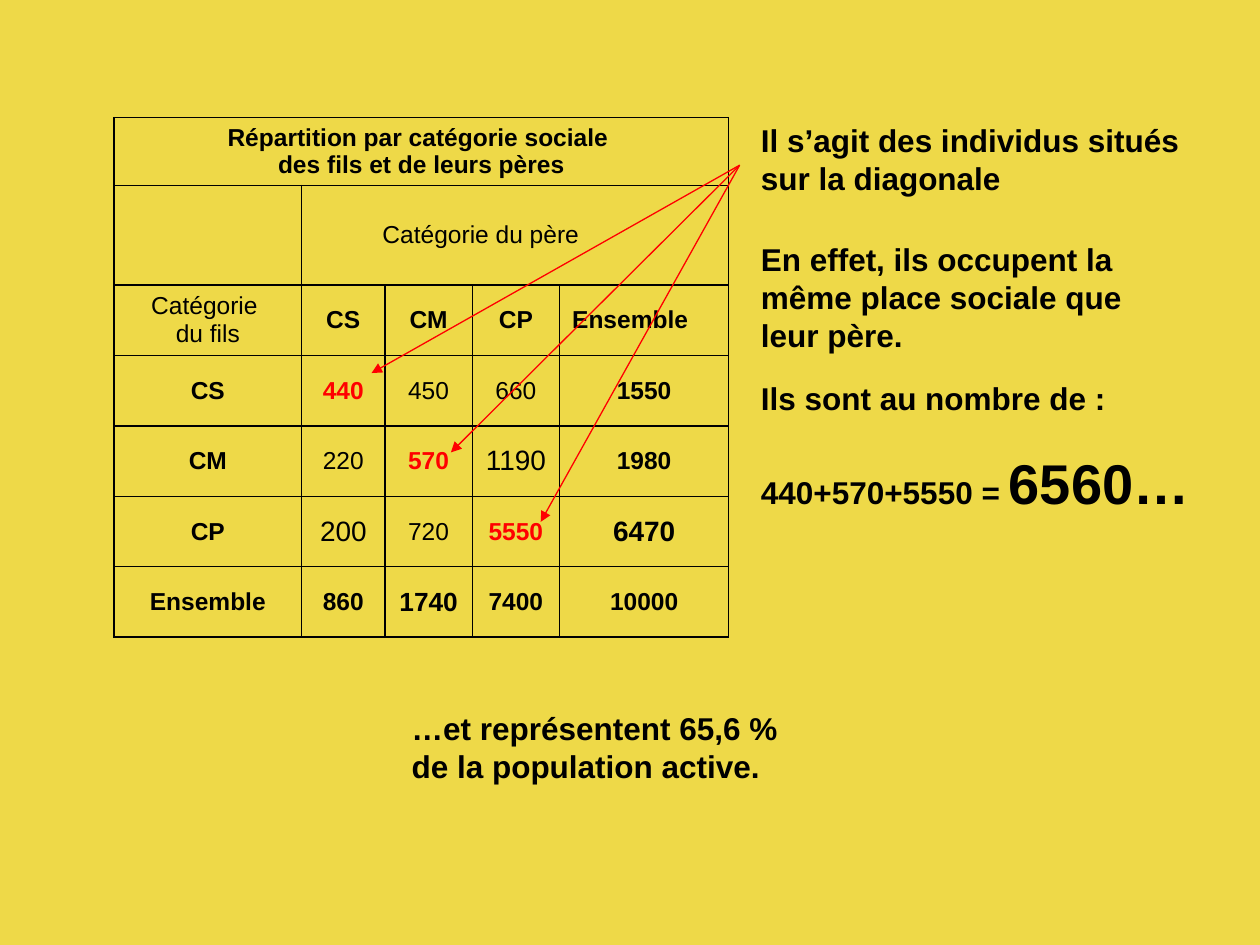
from lxml import etree
from pptx import Presentation
from pptx.dml.color import RGBColor
from pptx.enum.shapes import MSO_CONNECTOR
from pptx.enum.text import MSO_ANCHOR, PP_ALIGN
from pptx.oxml import parse_xml
from pptx.oxml.ns import nsdecls, qn
from pptx.util import Cm, Pt

BACKGROUND, BLACK, RED = "EED948", "000000", "FF0000"

# Content
TITLE = "Répartition par catégorie sociale \ndes fils et de leurs pères"
FATHER = "Catégorie du père"
GRID = [
    ["Catégorie \ndu fils", "CS", "CM", "CP", "Ensemble"],
    ["CS", "440", "450", "660", "1550"],
    ["CM", "220", "570", "1190", "1980"],
    ["CP", "200", "720", "5550", "6470"],
    ["Ensemble", "860", "1740", "7400", "10000"],
]
LARGER = {"1190": 16, "200": 16, "6470": 16, "1740": 15}
COLUMNS = [3.78, 1.68, 1.76, 1.76, 3.41]
ROWS = [1.34, 2.01] + [1.42] * len(GRID)
TABLE_LEFT, TABLE_TOP = 2.3, 2.37

# Comments: left, top, width, height, paragraphs of (text, size) runs
COMMENTS = [
    (15.09, 2.31, 9.4, 1.78, [[("Il s’agit des individus situés sur la diagonale", 18)]]),
    (15.09, 4.72, 9, 2.54, [[("En effet, ils occupent la même place sociale que leur père.", 18)]]),
    (15.09, 7.52, 9.2, 3.05, [[("Ils sont au nombre de :", 18)],
                              [("440+570+5550 = ", 18), ("6560…", 32)]]),
    (8.05, 14.17, 8.41, 1.78, [[("…et représentent 65,6 % de la population active.", 18)]]),
]
ARROW_START = (14.91, 3.33)
DIAGONAL_ENDS = [(7.49, 7.52), (9.09, 9.12), (10.9, 10.52)]


def rgb(color):
    return RGBColor.from_string(color)


def style(font, size, bold, color=BLACK):
    font.name, font.size, font.bold = "Arial", Pt(size), bold
    font.color.rgb = rgb(color)


def add_borders(cell):
    properties = cell._tc.get_or_add_tcPr()
    for position, side in enumerate(("lnL", "lnR", "lnT", "lnB")):
        properties.insert(position, parse_xml(
            f'<a:{side} {nsdecls("a")} w="12700"><a:solidFill>'
            f'<a:srgbClr val="{BLACK}"/></a:solidFill></a:{side}>'))


def write_cell(cell, text, size=14, bold=False, color=BLACK, align=PP_ALIGN.CENTER):
    cell.text_frame.text = text
    cell.vertical_anchor = MSO_ANCHOR.MIDDLE
    if align == PP_ALIGN.CENTER:
        cell.margin_left = cell.margin_right = Cm(0.2)
    for paragraph in cell.text_frame.paragraphs:
        paragraph.alignment = align
        for run in paragraph.runs:
            style(run.font, size, bold, color)


prs = Presentation()
prs.slide_width, prs.slide_height = Cm(25.4), Cm(19.05)
slide = prs.slides.add_slide(prs.slide_layouts[6])
slide.background.fill.solid()
slide.background.fill.fore_color.rgb = rgb(BACKGROUND)

# Mobility table
table = slide.shapes.add_table(
    len(ROWS), len(COLUMNS), Cm(TABLE_LEFT), Cm(TABLE_TOP),
    Cm(sum(COLUMNS)), Cm(sum(ROWS))).table
table.first_row = table.horz_banding = False
for column, width in zip(table.columns, COLUMNS):
    column.width = Cm(width)
for row, height in zip(table.rows, ROWS):
    row.height = Cm(height)
for cell in table.iter_cells():
    cell.fill.background()
    add_borders(cell)

last = len(COLUMNS) - 1
table.cell(0, 0).merge(table.cell(0, last))
table.cell(1, 1).merge(table.cell(1, last))
write_cell(table.cell(0, 0), TITLE, bold=True)
write_cell(table.cell(1, 1), FATHER, align=PP_ALIGN.LEFT)
table.cell(1, 1).margin_left = Cm(1.63)

for r, values in enumerate(GRID):
    for c, value in enumerate(values):
        heading = (r == 0) != (c == 0)
        total = last in (r, c)
        diagonal = r == c and 0 < r < last
        write_cell(table.cell(r + 2, c), value, LARGER.get(value, 14),
                   heading or total or diagonal, RED if diagonal else BLACK,
                   PP_ALIGN.LEFT if (r, c) == (0, last) else PP_ALIGN.CENTER)

# Comments
for left, top, width, height, paragraphs in COMMENTS:
    frame = slide.shapes.add_textbox(Cm(left), Cm(top), Cm(width), Cm(height)).text_frame
    frame.word_wrap = True
    for i, runs in enumerate(paragraphs):
        paragraph = frame.add_paragraph() if i else frame.paragraphs[0]
        if i:
            paragraph.space_before = Pt(18)
        for text, size in runs:
            run = paragraph.add_run()
            run.text = text
            style(run.font, size, True)

# Arrows to the diagonal
for end in DIAGONAL_ENDS:
    arrow = slide.shapes.add_connector(
        MSO_CONNECTOR.STRAIGHT, *(Cm(v) for v in ARROW_START + end))
    arrow.line.color.rgb = rgb(RED)
    arrow.line.width = Pt(0.75)
    etree.SubElement(arrow.line._get_or_add_ln(), qn("a:tailEnd"), type="triangle")
    etree.SubElement(arrow._element.spPr, qn("a:effectLst"))

prs.save("out.pptx")
